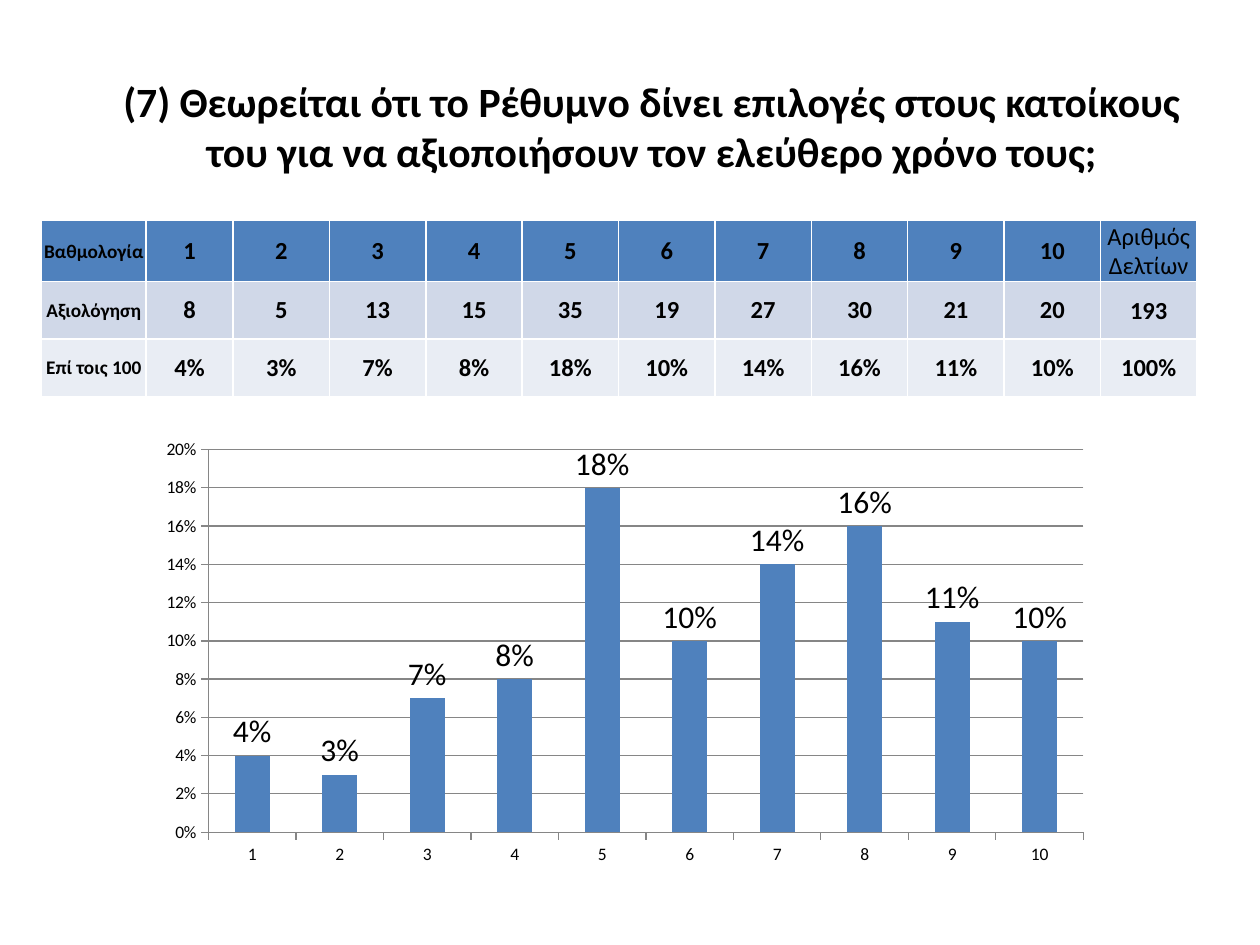
from dataclasses import dataclass

from pptx import Presentation
from pptx.chart.data import CategoryChartData
from pptx.dml.color import RGBColor
from pptx.enum.chart import XL_CHART_TYPE, XL_LABEL_POSITION, XL_TICK_MARK
from pptx.enum.text import MSO_ANCHOR, MSO_AUTO_SIZE, PP_ALIGN
from pptx.table import Table
from pptx.text.text import Font, TextFrame
from pptx.util import Inches, Pt

BLUE = "4F81BD"
BLACK = "000000"
GREY = "868686"


@dataclass
class Row:
    head: str
    cells: list[str]
    total: str
    fill: str
    bold: bool = True


def color(code: str) -> RGBColor:
    return RGBColor.from_string(code)


def style(font: Font, size: float, bold: bool = False) -> None:
    font.name = "Calibri"
    font.size = Pt(size)
    font.bold = bold
    font.color.rgb = color(BLACK)


def write(frame: TextFrame, text: str, *, size: float, bold: bool = True) -> None:
    frame.text = text
    line = frame.paragraphs[0]
    line.alignment = PP_ALIGN.CENTER
    style(line.runs[0].font, size, bold)


def draw_row(table: Table, index: int, row: Row) -> None:
    table.rows[index].height = Inches(1.37 / 3)
    texts = [row.head, *row.cells, row.total]
    last = len(texts) - 1
    for col, text in enumerate(texts):
        cell = table.cell(index, col)
        cell.fill.solid()
        cell.fill.fore_color.rgb = color(row.fill)
        cell.vertical_anchor = MSO_ANCHOR.MIDDLE
        edge = Inches(0.01 if index == 0 or col in (0, last) else 0)
        cell.margin_left = cell.margin_right = cell.margin_top = edge
        cell.margin_bottom = 0
        write(cell.text_frame, text, size=11 if col == 0 else 14,
              bold=row.bold or col < last)


def draw_chart(slide, cats: list[str], vals: list[float]) -> None:
    data = CategoryChartData(number_format="0%")
    data.categories = cats
    data.add_series("Series 1", vals)
    chart = slide.shapes.add_chart(
        XL_CHART_TYPE.COLUMN_CLUSTERED, Inches(1.17), Inches(3.42),
        Inches(7.58), Inches(3.51), data).chart
    style(chart.font, 10)
    chart.has_legend = False
    chart.has_title = False
    for axis in (chart.category_axis, chart.value_axis):
        axis.major_tick_mark = XL_TICK_MARK.OUTSIDE
        axis.minor_tick_mark = XL_TICK_MARK.NONE
        axis.format.line.color.rgb = color(GREY)
    scale = chart.value_axis
    scale.minimum_scale, scale.maximum_scale, scale.major_unit = 0, 0.2, 0.02
    scale.tick_labels.number_format = "0%"
    scale.tick_labels.number_format_is_linked = False
    scale.has_major_gridlines = True
    scale.major_gridlines.format.line.color.rgb = color(GREY)
    plot = chart.plots[0]
    plot.gap_width = 150
    plot.vary_by_categories = False
    bars = plot.series[0]
    bars.format.fill.solid()
    bars.format.fill.fore_color.rgb = color(BLUE)
    labels = bars.data_labels
    labels.show_value = True
    labels.position = XL_LABEL_POSITION.OUTSIDE_END
    labels.number_format = "0%"
    labels.number_format_is_linked = False
    style(labels.font, 18)


def main() -> None:
    deck = Presentation()
    deck.slide_width, deck.slide_height = Inches(10), Inches(7.5)
    slide = deck.slides.add_slide(deck.slide_layouts[5])

    title = slide.shapes.title
    title.left, title.top = Inches(0.67), Inches(0.58)
    title.width, title.height = Inches(9), Inches(0.83)
    frame = title.text_frame
    frame.auto_size = MSO_AUTO_SIZE.NONE
    frame.vertical_anchor = MSO_ANCHOR.MIDDLE
    write(frame, "(7) Θεωρείται ότι το Ρέθυμνο δίνει επιλογές στους κατοίκους "
          "του για να αξιοποιήσουν τον ελεύθερο χρόνο τους;", size=23.8)

    grades = [str(n) for n in range(1, 11)]
    votes = [8, 5, 13, 15, 35, 19, 27, 30, 21, 20]
    total = sum(votes)
    shares = [round(n / total, 2) for n in votes]
    rows = [
        Row("Βαθμολογία", grades, "Αριθμός Δελτίων", BLUE, bold=False),
        Row("Αξιολόγηση", [str(n) for n in votes], str(total), "D0D8E8"),
        Row("Επί τοις 100", [f"{n:.0%}" for n in shares], "100%", "E9EDF4"),
    ]
    widths = [0.83, 0.69] + [0.765] * 10
    table = slide.shapes.add_table(
        len(rows), len(widths), Inches(0.33), Inches(1.75),
        Inches(sum(widths)), Inches(1.37)).table
    for col, width in zip(table.columns, widths):
        col.width = Inches(width)
    for index, row in enumerate(rows):
        draw_row(table, index, row)

    draw_chart(slide, grades, shares)
    deck.save("out.pptx")


if __name__ == "__main__":
    main()
